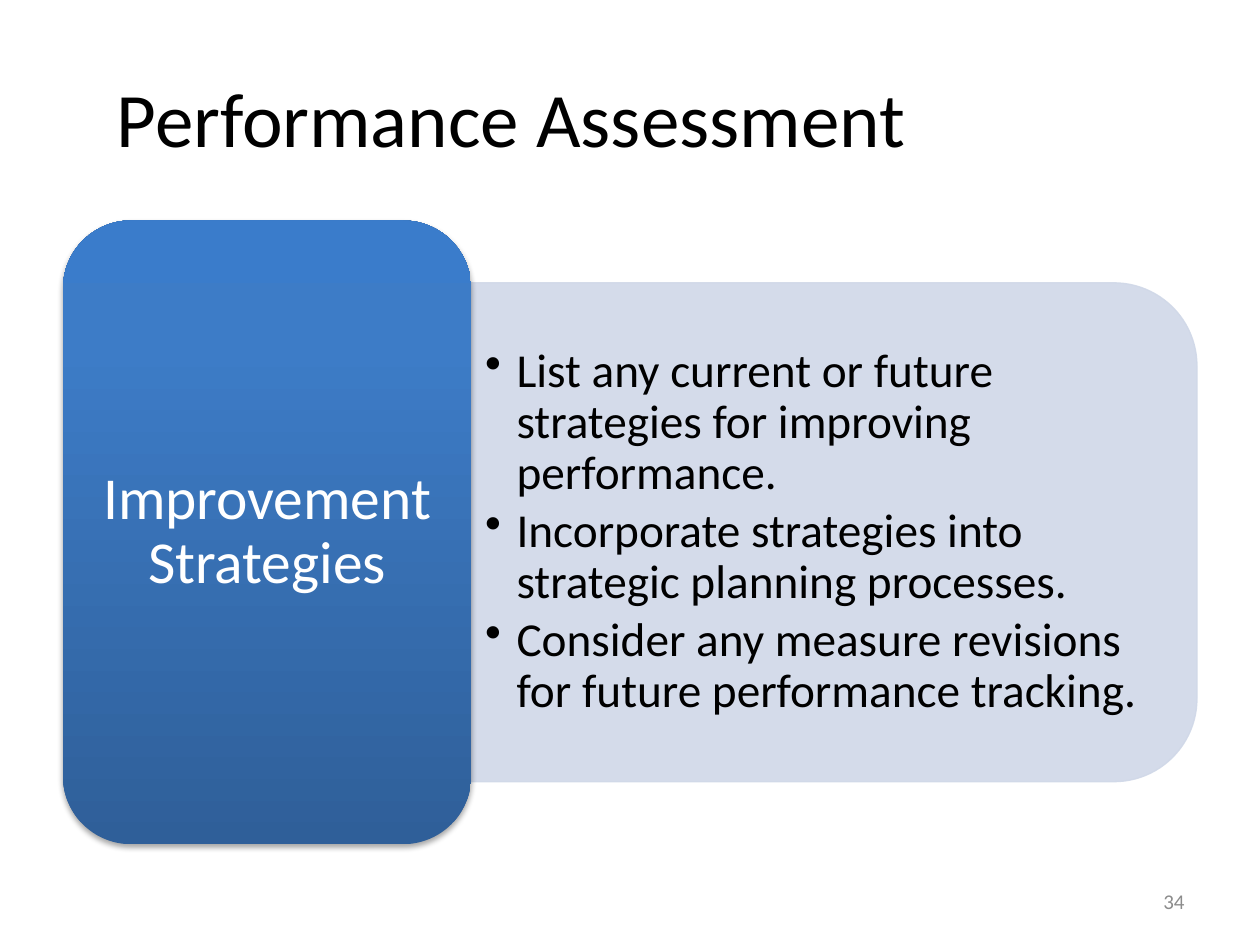
"""Build the Performance Assessment slide on improvement strategies."""
from pptx import Presentation
from pptx.dml.color import RGBColor
from pptx.enum import shapes, text
from pptx.oxml import parse_xml
from pptx.oxml.ns import nsdecls, qn
from pptx.util import Inches, Pt

BLACK = RGBColor(0x00, 0x00, 0x00)
WHITE = RGBColor(0xFF, 0xFF, 0xFF)
GREY = RGBColor(0x8C, 0x8C, 0x8C)
PALE_BLUE = RGBColor(0xD0, 0xD8, 0xE8)
CARD_STOPS = [
    (0, RGBColor(0x2F, 0x5F, 0x99)),
    (80, RGBColor(0x3D, 0x7C, 0xC7)),
    (100, RGBColor(0x3A, 0x7C, 0xCB)),
]

TITLE = "Performance Assessment"
HEADING = "Improvement Strategies"
STRATEGIES = [
    "List any current or future strategies for improving performance.",
    "Incorporate strategies into strategic planning processes.",
    "Consider any measure revisions for future performance tracking.",
]
PAGE_NUMBER = "34"

CARD = (0.5, 1.75, 3.24, 4.95)
PANEL_WIDTH, PANEL_HEIGHT = 5.76, 3.96
PANEL_LEFT = CARD[0] + CARD[2]
MIDDLE = CARD[1] + CARD[3] / 2


def write(shape, lines, size, color, align=text.PP_ALIGN.LEFT, margins=(0.1, 0.05),
          line_spacing=1.0, space_after=0, bullet=None):
    """Fill a shape with formatted paragraphs."""
    frame = shape.text_frame
    frame.word_wrap = True
    frame.vertical_anchor = text.MSO_ANCHOR.MIDDLE
    frame.margin_left = frame.margin_right = Inches(margins[0])
    frame.margin_top = frame.margin_bottom = Inches(margins[1])
    for index, line in enumerate(lines):
        para = frame.add_paragraph() if index else frame.paragraphs[0]
        para.alignment = align
        para.line_spacing = line_spacing
        para.space_after = Pt(space_after)
        if bullet:
            properties = para._p.get_or_add_pPr()
            properties.set("marL", str(Inches(0.25)))
            properties.set("indent", str(-Inches(0.25)))
            properties.append(parse_xml(f'<a:buChar {nsdecls("a")} char="{bullet}"/>'))
        span = para.add_run()
        span.text = line
        span.font.name = "Calibri"
        span.font.size = Pt(size)
        span.font.color.rgb = color


def add_text(page, place, lines, size, color, **style):
    """Add a text box at a place given in inches."""
    box = page.shapes.add_textbox(*map(Inches, place))
    write(box, lines, size, color, **style)


def add_panel(page):
    """Add the pale panel, a shape turned so its round corners face right."""
    left = PANEL_LEFT + (PANEL_WIDTH - PANEL_HEIGHT) / 2
    place = (left, MIDDLE - PANEL_WIDTH / 2, PANEL_HEIGHT, PANEL_WIDTH)
    panel = page.shapes.add_shape(shapes.MSO_SHAPE.ROUND_2_SAME_RECTANGLE, *map(Inches, place))
    panel.rotation = 90
    panel.shadow.inherit = False
    panel.fill.solid()
    panel.fill.fore_color.rgb = PALE_BLUE
    panel.line.color.rgb = PALE_BLUE
    panel.line.width = Pt(0.75)
    for color in panel._element.spPr.iter(qn("a:srgbClr")):
        color.append(parse_xml(f'<a:alpha {nsdecls("a")} val="90000"/>'))


def add_card(page):
    """Add the shaded heading card with its gradient and soft shadow."""
    card = page.shapes.add_shape(shapes.MSO_SHAPE.ROUNDED_RECTANGLE, *map(Inches, CARD))
    card.line.fill.background()
    card.shadow.inherit = False
    properties = card._element.spPr
    stops = "".join(f'<a:gs pos="{position * 1000}"><a:srgbClr val="{color}"/></a:gs>'
                    for position, color in CARD_STOPS)
    properties.find(qn("a:prstGeom")).addnext(parse_xml(
        f'<a:gradFill {nsdecls("a")} rotWithShape="1"><a:gsLst>{stops}</a:gsLst>'
        '<a:lin ang="16200000" scaled="0"/></a:gradFill>'))
    properties.find(qn("a:effectLst")).append(parse_xml(
        f'<a:outerShdw {nsdecls("a")} blurRad="{Pt(3.1)}" dist="{Pt(1.8)}" dir="5400000" '
        f'rotWithShape="0"><a:srgbClr val="{BLACK}"><a:alpha val="35000"/></a:srgbClr>'
        '</a:outerShdw>'))
    write(card, [HEADING], 34, WHITE, align=text.PP_ALIGN.CENTER,
          margins=(0.14, 0.07), line_spacing=0.9)


def main():
    """Assemble and save the slide."""
    deck = Presentation()
    deck.slide_width, deck.slide_height = Inches(10), Inches(7.5)
    page = deck.slides.add_slide(deck.slide_layouts[6])
    add_text(page, (0.83, 0.3, 8.67, 1.25), [TITLE], 44, BLACK)
    add_panel(page)
    add_text(page, (PANEL_LEFT, 2.44, 5.57, 3.57), STRATEGIES, 27, BLACK,
             margins=(0.11, 0.06), line_spacing=0.9, space_after=4, bullet="•")
    add_card(page)
    add_text(page, (7.17, 6.95, 2.33, 0.4), [PAGE_NUMBER], 12, GREY,
             align=text.PP_ALIGN.RIGHT)
    deck.save("out.pptx")


if __name__ == "__main__":
    main()
